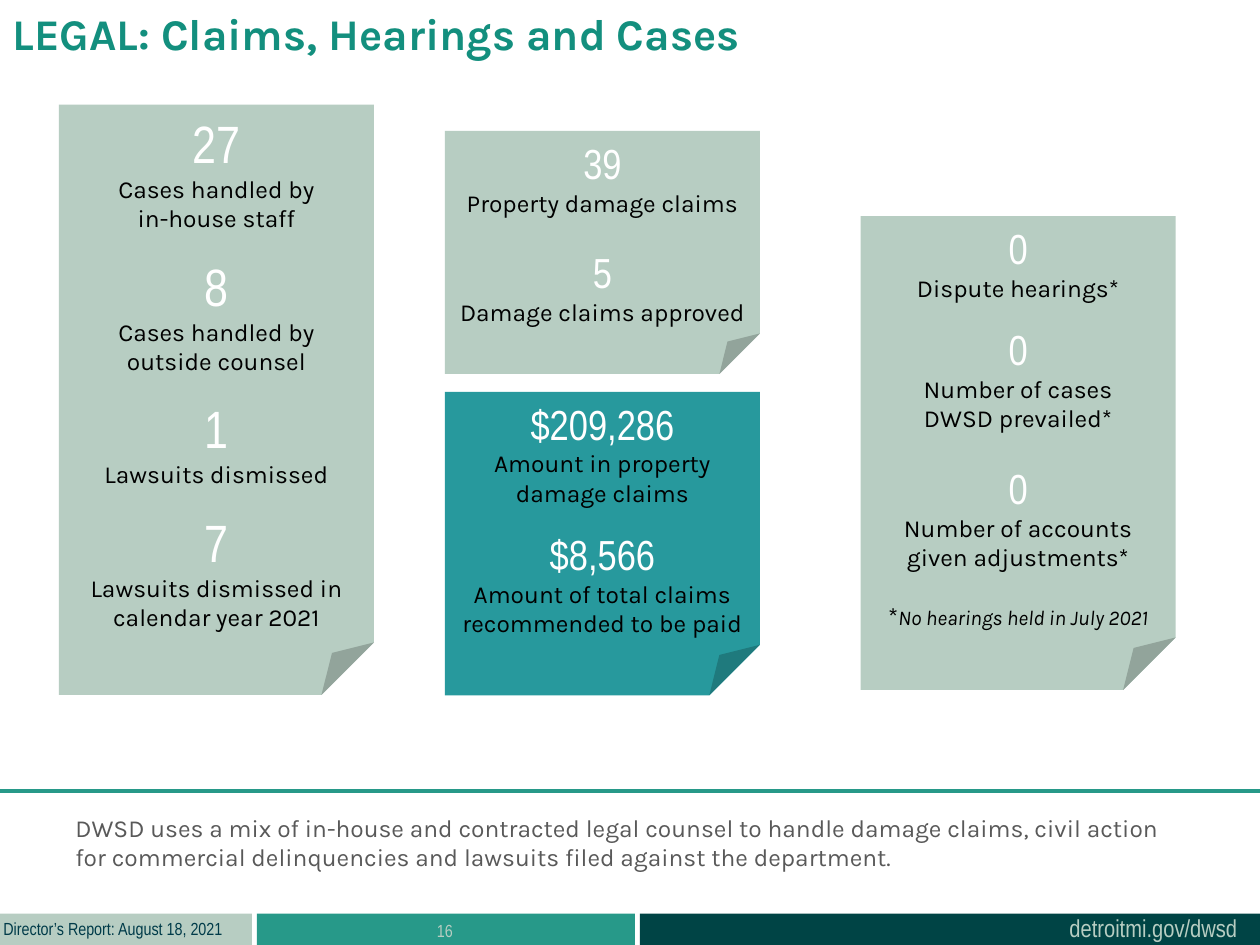
from dataclasses import dataclass
from typing import Optional

from lxml import etree
from pptx import Presentation
from pptx import util as u
from pptx.dml.color import RGBColor
from pptx.enum import shapes, text
from pptx.oxml.ns import qn


@dataclass(frozen=True)
class Theme:
    sage: str = "B7CDC2"
    green: str = "279989"
    teal: str = "27999D"
    deep: str = "004445"
    navy: str = "003B49"
    heading: str = "138F7E"
    grey: str = "595959"
    white: str = "FFFFFF"
    black: str = "000000"
    display: str = "Arial Narrow"
    body: str = "Karla"
    title_size: int = 25
    large: int = 30
    medium: int = 24
    label: int = 14
    note: int = 12
    small: int = 10


THEME = Theme()


@dataclass(frozen=True)
class Area:
    left: float
    top: float
    width: float
    height: float

    def lengths(self):
        return [u.Cm(v) for v in (self.left, self.top, self.width, self.height)]


@dataclass(frozen=True)
class Style:
    size: int
    font: str
    color: str
    bold: bool = False
    align: text.PP_ALIGN = text.PP_ALIGN.LEFT


@dataclass(frozen=True)
class Stat:
    value: str
    label: str
    gap: int = 0


@dataclass(frozen=True)
class Card:
    area: Area
    fill: str
    value_size: int
    stats: tuple[Stat, ...]
    note: Optional[str] = None


@dataclass(frozen=True)
class Caption:
    area: Area
    words: str
    style: Style
    wrap: bool = True


CENTER = text.PP_ALIGN.CENTER
LABEL = Style(THEME.label, THEME.body, THEME.black, align=CENTER)
TITLE = Caption(Area(0, 0, 19.28, 1.96), "LEGAL: Claims, Hearings and Cases",
                Style(THEME.title_size, THEME.body, THEME.heading, bold=True))

BANDS = (
    (Area(5.18, 18.42, 7.62, 0.63), THEME.green),
    (Area(12.9, 18.42, 12.5, 0.63), THEME.deep),
    (Area(0, 18.42, 5.08, 0.63), THEME.sage),
)

CAPTIONS = (
    Caption(Area(21.31, 18.29, 3.94, 0.86), "detroitmi.gov/dwsd",
            Style(THEME.label, THEME.display, THEME.sage), wrap=False),
    Caption(Area(-0.18, 18.39, 5.13, 0.69), "Director’s Report: August 18, 2021",
            Style(THEME.small, THEME.display, THEME.navy), wrap=False),
    Caption(Area(5.16, 18.42, 7.62, 1.02), "16",
            Style(THEME.small, THEME.display, THEME.sage, align=CENTER)),
    Caption(Area(1.27, 16.26, 22.91, 1.45),
            "DWSD uses a mix of in-house and contracted legal counsel to handle damage "
            "claims, civil action for commercial delinquencies and lawsuits filed against "
            "the department.",
            Style(THEME.label, THEME.body, THEME.grey)),
)

CARDS = (
    Card(Area(8.97, 2.64, 6.35, 4.9), THEME.sage, THEME.medium, (
        Stat("39", "Property damage claims"),
        Stat("5", "Damage claims approved", 17),
    )),
    Card(Area(8.97, 7.9, 6.35, 6.12), THEME.teal, THEME.medium, (
        Stat("$209,286", "Amount in property\ndamage claims"),
        Stat("$8,566", "Amount of total claims recommended to be paid", 12),
    )),
    Card(Area(17.35, 4.36, 6.35, 9.55), THEME.sage, THEME.medium, (
        Stat("0", "Dispute hearings*"),
        Stat("0", "Number of cases\nDWSD prevailed*", 12),
        Stat("0", "Number of accounts\ngiven adjustments*", 17),
    ), note="No hearings held in July 2021"),
    Card(Area(1.19, 2.11, 6.35, 11.9), THEME.sage, THEME.large, (
        Stat("27", "Cases handled by\nin-house staff"),
        Stat("8", "Cases handled by\noutside counsel", 12),
        Stat("1", "Lawsuits dismissed", 12),
        Stat("7", "Lawsuits dismissed in calendar year 2021", 12),
    )),
)


def format_para(para, style: Style, gap: int = 0) -> None:
    para.alignment = style.align
    if gap:
        para.space_before = u.Pt(gap)
    para.font.size = u.Pt(style.size)
    para.font.name = style.font
    para.font.bold = style.bold
    para.font.color.rgb = RGBColor.from_string(style.color)


def set_frame(box, wrap: bool = True):
    frame = box.text_frame
    frame.auto_size = text.MSO_AUTO_SIZE.NONE
    frame.word_wrap = wrap
    frame.vertical_anchor = text.MSO_ANCHOR.TOP
    return frame


def add_panel(page, preset, area: Area, fill: str):
    panel = page.shapes.add_shape(preset, *area.lengths())
    panel.shadow.inherit = False
    panel.fill.solid()
    panel.fill.fore_color.rgb = RGBColor.from_string(fill)
    panel.line.fill.background()
    return panel


def write_caption(box, caption: Caption) -> None:
    para = set_frame(box, caption.wrap).paragraphs[0]
    para.text = caption.words
    format_para(para, caption.style)


def add_card(page, card: Card) -> None:
    panel = add_panel(page, shapes.MSO_SHAPE.FOLDED_CORNER, card.area, card.fill)
    frame = set_frame(panel)
    value_style = Style(card.value_size, THEME.display, THEME.white, align=CENTER)
    for index, stat in enumerate(card.stats):
        value = frame.add_paragraph() if index else frame.paragraphs[0]
        value.text = stat.value
        format_para(value, value_style, stat.gap)
        label = frame.add_paragraph()
        label.text = stat.label
        format_para(label, LABEL)
    if card.note:
        para = frame.add_paragraph()
        format_para(para, LABEL, 17)
        para.add_run().text = "*"
        span = para.add_run()
        span.text = card.note
        span.font.size = u.Pt(THEME.note)
        span.font.italic = True


def add_rule(page, top: float, width: float) -> None:
    rule = page.shapes.add_connector(
        shapes.MSO_CONNECTOR.STRAIGHT, u.Cm(width), u.Cm(top), u.Cm(0), u.Cm(top))
    rule.line.color.rgb = RGBColor.from_string(THEME.green)
    rule.line.width = u.Pt(2.25)
    etree.SubElement(rule._element.spPr, qn("a:effectLst"))


def main() -> None:
    deck = Presentation()
    deck.slide_width, deck.slide_height = u.Cm(25.4), u.Cm(19.05)
    page = deck.slides.add_slide(deck.slide_layouts[5])
    title = page.shapes.title
    title.left, title.top, title.width, title.height = TITLE.area.lengths()
    write_caption(title, TITLE)
    for area, fill in BANDS:
        add_panel(page, shapes.MSO_SHAPE.RECTANGLE, area, fill)
    for caption in CAPTIONS:
        write_caption(page.shapes.add_textbox(*caption.area.lengths()), caption)
    for card in CARDS:
        add_card(page, card)
    add_rule(page, 15.95, 25.7)
    deck.save("out.pptx")


if __name__ == "__main__":
    main()
